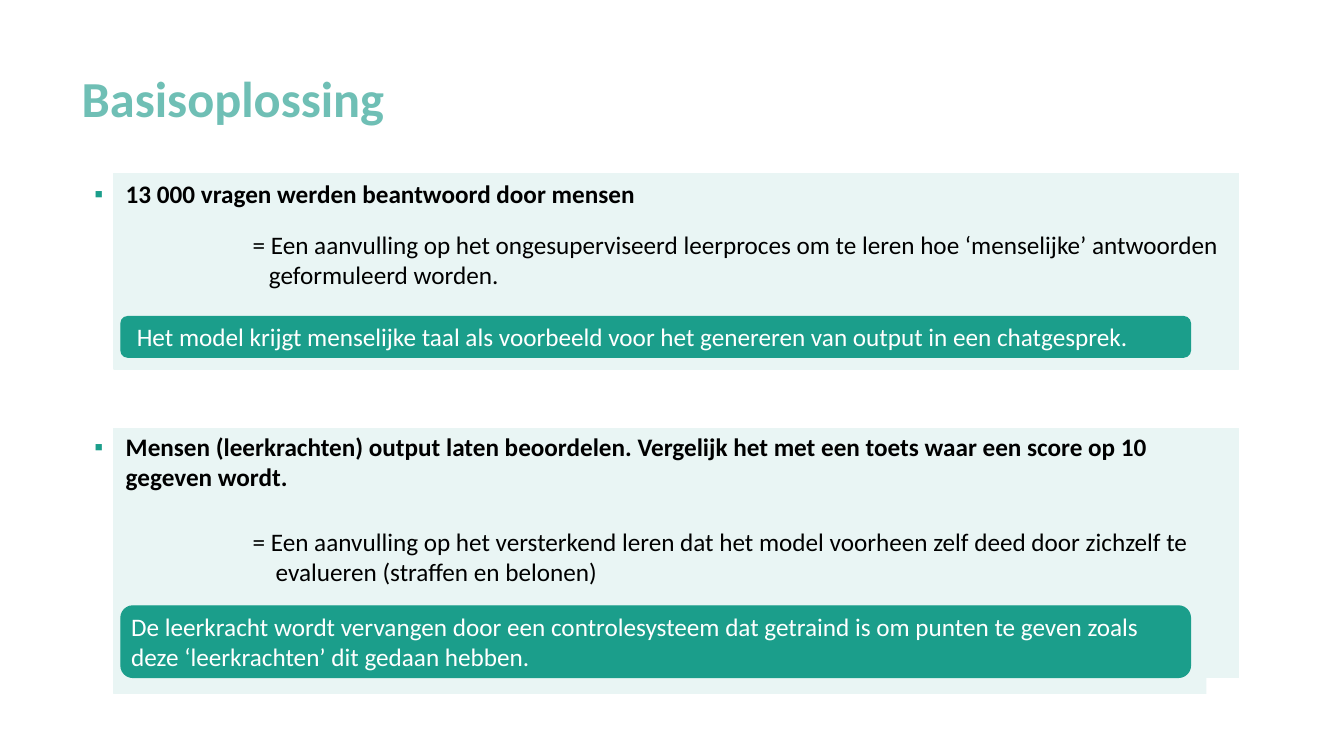
from dataclasses import dataclass
from pptx import Presentation
from pptx.dml.color import RGBColor
from pptx.enum.shapes import MSO_SHAPE
from pptx.enum.text import MSO_ANCHOR, PP_ALIGN
from pptx.oxml.ns import qn
from pptx.util import Cm, Pt
from lxml import etree

RECT, ROUND = MSO_SHAPE.RECTANGLE, MSO_SHAPE.ROUNDED_RECTANGLE
TOP, MIDDLE = MSO_ANCHOR.TOP, MSO_ANCHOR.MIDDLE
LEFT = PP_ALIGN.LEFT


@dataclass(frozen=True)
class Theme:
    font: str = "Calibri"
    title: str = "6FBFB5"
    pale: str = "E9F5F4"
    teal: str = "1B9E8B"
    ink: str = "000000"
    white: str = "FFFFFF"
    big: int = 36
    body: int = 18


THEME = Theme()
TITLE = "Basisoplossing"
BLOCKS = [
    {
        "panel": (4.37, 4.93),
        "head": ("13 000 vragen werden beantwoord door mensen", 4.37, 20.4, 1.02),
        "note": ("= Een aanvulling op het ongesuperviseerd leerproces om te leren hoe "
                 "‘menselijke’ antwoorden geformuleerd worden.", 5.64, 25.25, 0.41),
        "bar": ("Het model krijgt menselijke taal als voorbeeld voor het genereren van "
                "output in een chatgesprek.", 7.98, 1.02, 0.35),
    },
    {
        "panel": (10.8, 6.68),
        "head": ("Mensen (leerkrachten) output laten beoordelen. Vergelijk het met een toets "
                 "waar een score op 10 gegeven wordt.", 10.74, 28.35, 1.8),
        "note": ("= Een aanvulling op het versterkend leren dat het model voorheen zelf deed "
                 "door zichzelf te evalueren (straffen en belonen)", 13.13, 25.5, 0.58),
        "bar": ("De leerkracht wordt vervangen door een controlesysteem dat getraind is om "
                "punten te geven zoals deze ‘leerkrachten’ dit gedaan hebben.", 15.27, 1.8, 0.17),
    },
]
PANEL_X, PANEL_W = 2.87, 28.35
BAR_X, BAR_W = 3.05, 26.95
HEAD_X, NOTE_X = 2.13, 6.12
HANG = 0.79
CORNER = (30.4, 17.09, 3.45, 1.37)


def paint(slide, kind, box, fill, edge=True):
    shape = slide.shapes.add_shape(kind, *map(Cm, box))
    shape.shadow.inherit = False
    shape.fill.solid()
    shape.fill.fore_color.rgb = RGBColor.from_string(fill)
    if edge:
        shape.line.color.rgb = RGBColor.from_string(fill)
        shape.line.width = Pt(1)
    else:
        shape.line.fill.background()
    return shape


def write(shape, text, size, color, bold=False, anchor=TOP, left=0.25,
          hang=0, mark=False):
    frame = shape.text_frame
    frame.word_wrap = True
    frame.vertical_anchor = anchor
    frame.margin_left, frame.margin_right = Cm(left), Cm(0.25)
    frame.margin_top = frame.margin_bottom = Cm(0.13)
    para = frame.paragraphs[0]
    para.alignment = LEFT
    if hang:
        props = para._p.get_or_add_pPr()
        props.set("marL", str(Cm(hang)))
        props.set("indent", str(-Cm(hang)))
        if mark:
            tint = etree.SubElement(props, qn("a:buClr"))
            etree.SubElement(tint, qn("a:srgbClr"), val=THEME.teal)
            etree.SubElement(props, qn("a:buFont"), typeface="Arial")
            etree.SubElement(props, qn("a:buChar"), char="▪")
    run = para.add_run()
    run.text = text
    run.font.name = THEME.font
    run.font.size = Pt(size)
    run.font.bold = bold
    run.font.color.rgb = RGBColor.from_string(color)


def label(slide, box, text, **style):
    shape = slide.shapes.add_textbox(*map(Cm, box))
    write(shape, text, THEME.body, THEME.ink, **style)


def block(slide, part):
    top, high = part["panel"]
    paint(slide, RECT, (PANEL_X, top, PANEL_W, high), THEME.pale)
    text, top, high, left = part["bar"]
    bar = paint(slide, ROUND, (BAR_X, top, BAR_W, high), THEME.teal)
    write(bar, text, THEME.body, THEME.white, anchor=MIDDLE, left=left)
    text, top, wide, high = part["head"]
    label(slide, (HEAD_X, top, wide, high), text, bold=True, hang=HANG, mark=True)
    text, top, wide, hang = part["note"]
    label(slide, (NOTE_X, top, wide, 1.8), text, hang=hang)


def main():
    deck = Presentation()
    deck.slide_width, deck.slide_height = Cm(33.87), Cm(19.05)
    slide = deck.slides.add_slide(deck.slide_layouts[5])
    title = slide.shapes.title
    title.left, title.top, title.width, title.height = map(Cm, (1.52, 1.57, 29.29, 1.8))
    write(title, TITLE, THEME.big, THEME.title, bold=True, left=0.54)
    for part in BLOCKS:
        block(slide, part)
    paint(slide, RECT, CORNER, THEME.white, edge=False)
    deck.save("out.pptx")


if __name__ == "__main__":
    main()
